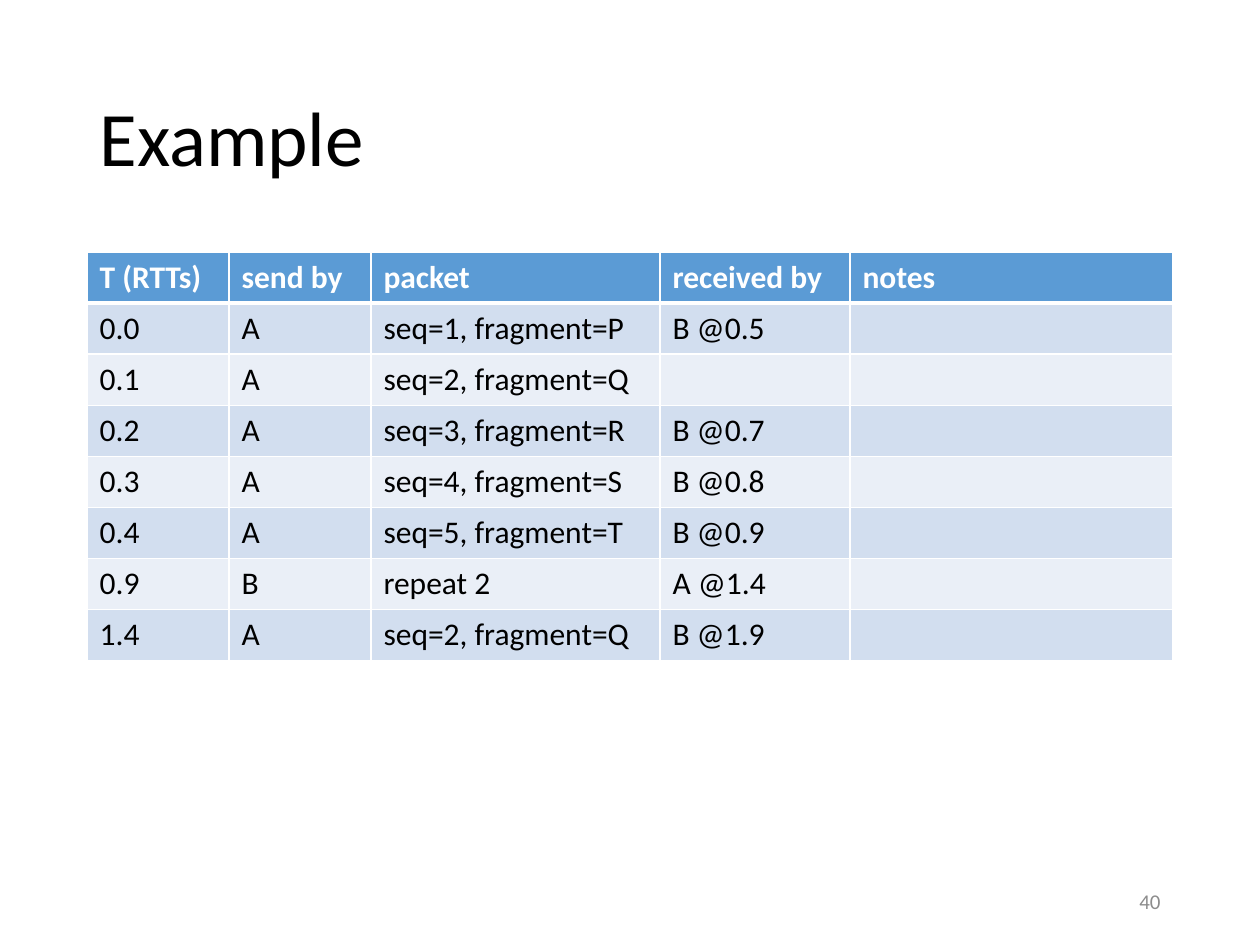
from lxml import etree
from pptx import Presentation
from pptx.dml.color import RGBColor
from pptx.enum.text import MSO_ANCHOR, MSO_AUTO_SIZE, PP_ALIGN
from pptx.oxml.ns import qn
from pptx.util import Emu, Pt

MIDDLE = MSO_ANCHOR.MIDDLE
NO_FIT = MSO_AUTO_SIZE.NONE
LEFT, RIGHT = PP_ALIGN.LEFT, PP_ALIGN.RIGHT

SCALE = 914400 / 126
THEME = {
    "font": "Calibri",
    "ink": "000000",
    "paper": "FFFFFF",
    "header": "5B9BD5",
    "bands": ("D2DEEF", "EAEFF7"),
    "muted": "8C8C8C",
    "title_size": 44,
    "cell_size": 18,
    "number_size": 12,
    "rule": 1,
    "header_rule": 3,
}

COLUMN_WIDTHS = (142, 142, 289, 190, 323)
ROW_HEIGHT = 51
PACKET_LOG = (
    ("T (RTTs)", "send by", "packet", "received by", "notes"),
    ("0.0", "A", "seq=1, fragment=P", "B @0.5", ""),
    ("0.1", "A", "seq=2, fragment=Q", "", ""),
    ("0.2", "A", "seq=3, fragment=R", "B @0.7", ""),
    ("0.3", "A", "seq=4, fragment=S", "B @0.8", ""),
    ("0.4", "A", "seq=5, fragment=T", "B @0.9", ""),
    ("0.9", "B", "repeat 2", "A @1.4", ""),
    ("1.4", "A", "seq=2, fragment=Q", "B @1.9", ""),
)


def px(length):
    return Emu(round(length * SCALE))


def write(frame, wording, size, color, bold=False, align=LEFT):
    frame.text = wording
    paragraph = frame.paragraphs[0]
    paragraph.alignment = align
    font = paragraph.font if not wording else paragraph.runs[0].font
    font_format = {"name": THEME["font"], "size": Pt(size), "bold": bold}
    for attribute, setting in font_format.items():
        setattr(font, attribute, setting)
    font.color.rgb = RGBColor.from_string(color)


deck = Presentation()
deck.slide_width, deck.slide_height = px(1260), px(945)
slide = deck.slides.add_slide(deck.slide_layouts[5])

heading = slide.shapes.title
heading_format = {"left": px(87), "top": px(50), "width": px(1086), "height": px(183)}
for attribute, setting in heading_format.items():
    setattr(heading, attribute, setting)
write(heading.text_frame, "Example", THEME["title_size"], THEME["ink"])
heading.text_frame.paragraphs[0].line_spacing = 0.9

log = slide.shapes.add_table(
    len(PACKET_LOG), len(COLUMN_WIDTHS),
    px(87), px(252), px(sum(COLUMN_WIDTHS)), px(ROW_HEIGHT * len(PACKET_LOG)),
).table
for column, width in zip(log.columns, COLUMN_WIDTHS):
    column.width = px(width)

for row_index, entries in enumerate(PACKET_LOG):
    log.rows[row_index].height = px(ROW_HEIGHT)
    is_header = row_index == 0
    fill_color = THEME["header"] if is_header else THEME["bands"][(row_index - 1) % 2]
    ink = THEME["paper"] if is_header else THEME["ink"]
    rules = {
        "a:lnL": THEME["rule"],
        "a:lnR": THEME["rule"],
        "a:lnT": THEME["header_rule"] if row_index == 1 else THEME["rule"],
        "a:lnB": THEME["header_rule"] if is_header else THEME["rule"],
    }
    for column_index, entry in enumerate(entries):
        cell = log.cell(row_index, column_index)
        write(cell.text_frame, entry, THEME["cell_size"], ink, is_header)
        properties = cell._tc.get_or_add_tcPr()
        for side, weight in rules.items():
            border = etree.SubElement(properties, qn(side), w=str(Pt(weight)))
            border_fill = etree.SubElement(border, qn("a:solidFill"))
            etree.SubElement(border_fill, qn("a:srgbClr"), val=THEME["paper"])
        cell.fill.solid()
        cell.fill.fore_color.rgb = RGBColor.from_string(fill_color)

page_number = slide.shapes.add_textbox(px(890), px(876), px(283), px(50))
write(page_number.text_frame, "40", THEME["number_size"], THEME["muted"], align=RIGHT)

frame_format = {"vertical_anchor": MIDDLE, "word_wrap": True, "auto_size": NO_FIT}
for frame in (heading.text_frame, page_number.text_frame):
    for attribute, setting in frame_format.items():
        setattr(frame, attribute, setting)

deck.save("out.pptx")
